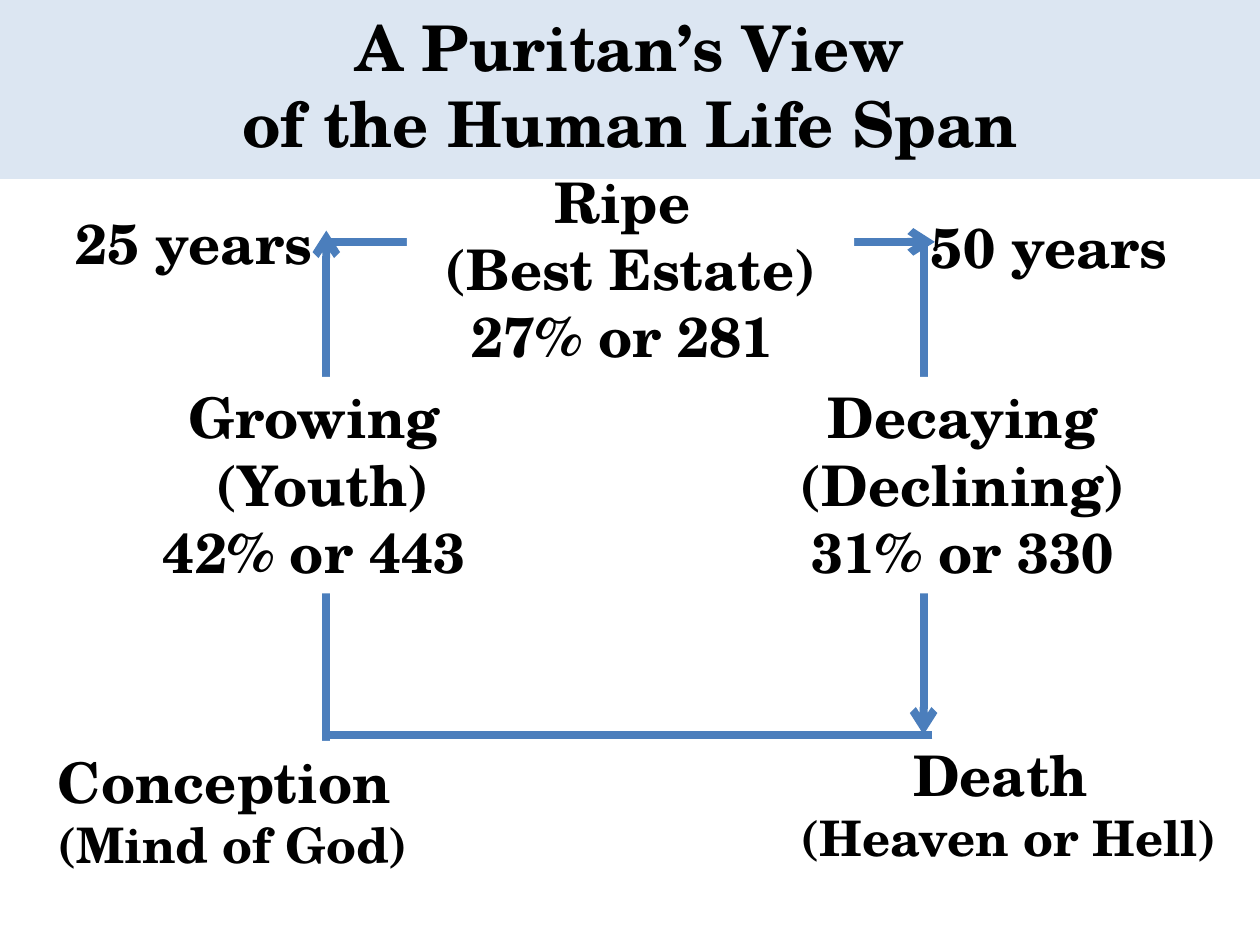
from dataclasses import dataclass

from lxml import etree
from pptx import Presentation
from pptx import util as u
from pptx.dml.color import RGBColor
from pptx.enum import shapes, text
from pptx.oxml import ns


@dataclass(frozen=True)
class Theme:
    font: str = "TeX Gyre Schola"
    ink: RGBColor = RGBColor(0x00, 0x00, 0x00)
    paper: RGBColor = RGBColor(0xFF, 0xFF, 0xFF)
    band: RGBColor = RGBColor(0xDC, 0xE6, 0xF2)
    line: RGBColor = RGBColor(0x4B, 0x7E, 0xBC)
    line_width: float = 4.5
    title: int = 36
    label: int = 32
    note: int = 28


THEME = Theme()
CENTER = text.PP_ALIGN.CENTER
LEFT = text.PP_ALIGN.LEFT


def add_rectangle(slide, box, fill):
    shape = slide.shapes.add_shape(
        shapes.MSO_SHAPE.RECTANGLE, *(u.Inches(value) for value in box))
    shape.shadow.inherit = False
    shape.fill.solid()
    shape.fill.fore_color.rgb = fill
    shape.line.fill.background()
    return shape


def add_label(slide, box, lines, fill=None, align=CENTER):
    """Place (wording, size) lines in a box, on a solid ground if fill is given."""
    if fill is None:
        shape = slide.shapes.add_textbox(*(u.Inches(value) for value in box))
    else:
        shape = add_rectangle(slide, box, fill)
    frame = shape.text_frame
    frame.word_wrap = True
    frame.vertical_anchor = text.MSO_ANCHOR.TOP
    for index, (wording, size) in enumerate(lines):
        paragraph = frame.add_paragraph() if index else frame.paragraphs[0]
        paragraph.alignment = align
        run = paragraph.add_run()
        run.text = wording
        run.font.name = THEME.font
        run.font.size = u.Pt(size)
        run.font.bold = True
        run.font.color.rgb = THEME.ink


def add_line(slide, start, end, arrow=True):
    connector = slide.shapes.add_connector(
        shapes.MSO_CONNECTOR.STRAIGHT,
        *(u.Inches(value) for value in (*start, *end)))
    connector.line.color.rgb = THEME.line
    connector.line.width = u.Pt(THEME.line_width)
    if arrow:
        outline = connector.line._get_or_add_ln()
        etree.SubElement(outline, ns.qn("a:tailEnd"), type="arrow")
    etree.SubElement(connector._element.spPr, ns.qn("a:effectLst"))


def add_life_path(slide, box):
    """Draw the path up, across and down, closed by a base line."""
    left, top, width, height = box
    right, bottom = left + width, top + height
    add_line(slide, (left, bottom + 0.59), (left, top - 0.09))
    add_line(slide, (left, top), (right + 0.09, top))
    add_line(slide, (right, top), (right, bottom))
    add_line(slide, (right + 0.07, bottom), (left - 0.03, bottom), arrow=False)


def add_endpoint(slide, box, name, meaning, fill=None):
    add_label(slide, box, [(name, THEME.label), (meaning, THEME.note)], fill)


def add_age(slide, box, age):
    add_label(slide, box, [(age, THEME.label)], align=LEFT)


def add_stage(slide, box, *lines):
    add_label(slide, box, [(line, THEME.label) for line in lines], THEME.paper)


def add_title(slide, box, *lines):
    left, top, width, height = box
    add_rectangle(slide, box, THEME.band)
    add_label(slide, (left, top + 0.02, width, height - 0.11),
              [(line, THEME.title) for line in lines])


def main():
    presentation = Presentation()
    presentation.slide_width = u.Inches(10)
    presentation.slide_height = u.Inches(7.5)
    slide = presentation.slides.add_slide(presentation.slide_layouts[6])

    add_endpoint(slide, (6.17, 5.83, 3.67, 1.11), "Death ", "(Heaven or Hell)")
    add_life_path(slide, (2.59, 1.92, 4.74, 3.91))
    add_endpoint(slide, (0.33, 5.88, 3.03, 1.11),
                 "Conception ", "(Mind of God)", THEME.paper)
    add_age(slide, (7.29, 1.64, 2.25, 0.64), "50 years")
    add_age(slide, (0.5, 1.61, 2.42, 0.64), "25 years")
    add_stage(slide, (6.24, 2.99, 2.8, 1.72),
              "Decaying", "(Declining)", "31% or 330")
    add_stage(slide, (3.23, 1.28, 3.55, 1.72),
              "Ripe ", "(Best Estate)", "27% or 281 ")
    add_stage(slide, (1.19, 2.99, 2.74, 1.72),
              "Growing ", "(Youth)", "42% or 443 ")
    add_title(slide, (0, 0, 10, 1.42),
              "A Puritan’s View", "of the Human Life Span")

    presentation.save("out.pptx")


if __name__ == "__main__":
    main()
